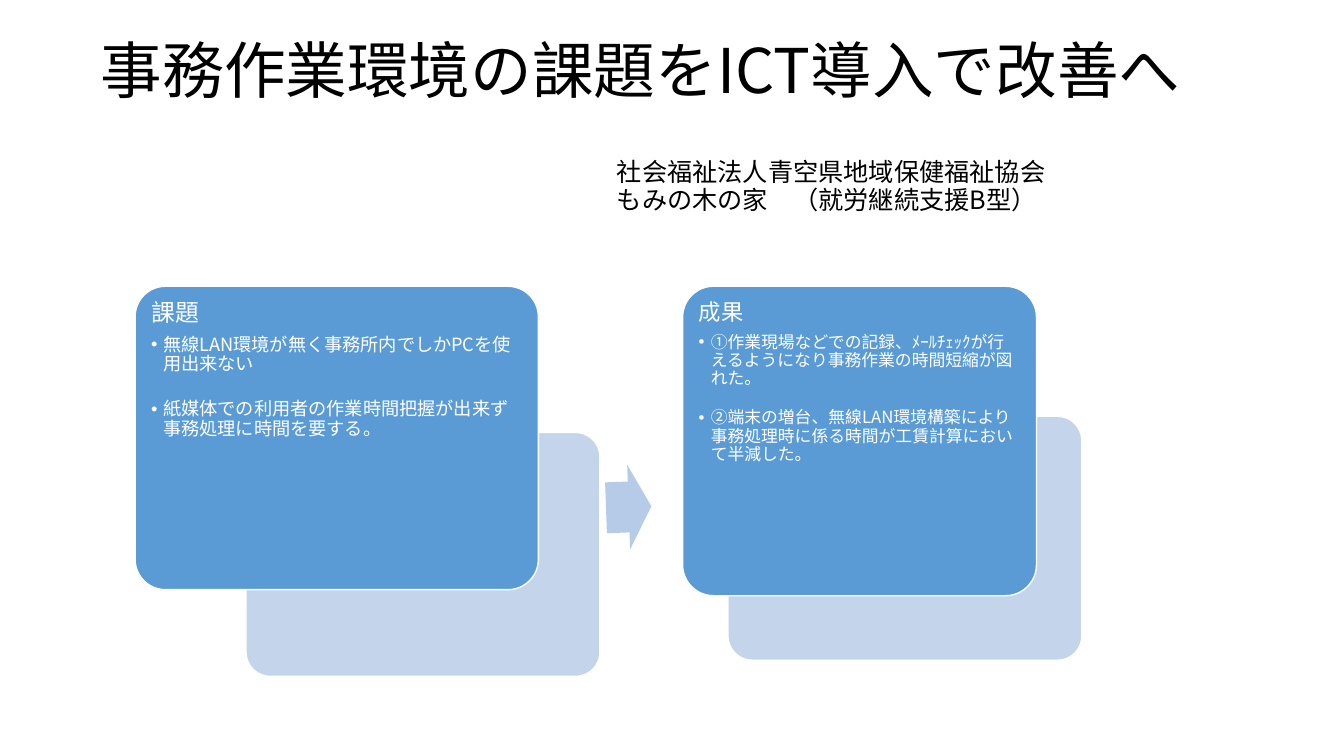
from lxml import etree
from pptx import Presentation
from pptx.dml.color import RGBColor
from pptx.enum.shapes import MSO_SHAPE
from pptx.enum.text import MSO_ANCHOR, MSO_AUTO_SIZE, PP_ALIGN
from pptx.oxml.ns import qn
from pptx.util import Inches, Pt

ROUNDED = MSO_SHAPE.ROUNDED_RECTANGLE
RIGHT_ARROW = MSO_SHAPE.RIGHT_ARROW
TOP, MIDDLE = MSO_ANCHOR.TOP, MSO_ANCHOR.MIDDLE
NO_AUTOFIT = MSO_AUTO_SIZE.NONE
LEFT = PP_ALIGN.LEFT

FONT = "Noto Sans CJK JP"
COLORS = {
    "black": "000000",
    "white": "FFFFFF",
    "card": "5B9BD5",
    "backing": "C4D5EB",
    "arrow": "B5CBE7",
}
LINE_SPACING = 0.9
INDENT = 0.12


def place(item, box):
    item.left, item.top, item.width, item.height = map(Inches, box)


def write(paragraph, text, size, color="black", after=0, bullet=False):
    paragraph.alignment = LEFT
    paragraph.line_spacing = LINE_SPACING
    paragraph.space_before = Pt(0)
    paragraph.space_after = Pt(after)
    properties = paragraph._p.get_or_add_pPr()
    indent = Inches(INDENT) if bullet else 0
    properties.set("marL", str(indent))
    properties.set("indent", str(-indent))
    if bullet:
        paragraph.level = 1
        etree.SubElement(properties, qn("a:buChar")).set("char", "•")
    else:
        etree.SubElement(properties, qn("a:buNone"))
    run = paragraph.add_run()
    run.text = text
    run.font.size = Pt(size)
    run.font.name = FONT
    run.font.color.rgb = RGBColor.from_string(COLORS[color])
    etree.SubElement(run._r.get_or_add_rPr(), qn("a:ea")).set("typeface", FONT)


def prepare_frame(frame, anchor, side=0.1, top=0.05):
    frame.word_wrap = True
    frame.auto_size = NO_AUTOFIT
    frame.vertical_anchor = anchor
    frame.margin_left = frame.margin_right = Inches(side)
    frame.margin_top = frame.margin_bottom = Inches(top)


def add_block(slide, kind, box, fill, adjustments, outlined=False):
    block = slide.shapes.add_shape(kind, *map(Inches, box))
    block.shadow.inherit = False
    for index, value in enumerate(adjustments):
        block.adjustments[index] = value
    block.fill.solid()
    block.fill.fore_color.rgb = RGBColor.from_string(COLORS[fill])
    if outlined:
        block.line.color.rgb = RGBColor.from_string(COLORS["white"])
        block.line.width = Pt(1)
    else:
        block.line.fill.background()
    return block


def add_heading(slide, box, text):
    heading = slide.shapes.title
    place(heading, box)
    prepare_frame(heading.text_frame, MIDDLE)
    write(heading.text_frame.paragraphs[0], text, 44)


def add_organization(slide, box, lines):
    organization = slide.shapes.add_textbox(*map(Inches, box))
    frame = organization.text_frame
    prepare_frame(frame, MIDDLE)
    for index, line in enumerate(lines):
        write(frame.add_paragraph() if index else frame.paragraphs[0], line, 18)


def add_card(slide, box, backing, points, heading, items, size, gap):
    left, top, width, height = box
    add_block(slide, ROUNDED, backing, "backing", [0.1], outlined=True)
    add_block(slide, ROUNDED, box, "card", [0.1], outlined=True)
    place(points, (left + 0.09, top + 0.08, width - 0.18, height - 0.17))
    slide.shapes._spTree.append(points._element)
    frame = points.text_frame
    prepare_frame(frame, TOP, side=0.07, top=0.07)
    write(frame.paragraphs[0], heading, size + 4, "white", after=6)
    for item in items:
        write(frame.add_paragraph(), item, size, "white", after=gap, bullet=True)


def add_arrow(slide, box):
    arrow = add_block(slide, RIGHT_ARROW, box, "arrow", [0.6, 0.5])
    arrow.rotation = 358


def main():
    deck = Presentation()
    deck.slide_width, deck.slide_height = Inches(13.33), Inches(7.5)
    slide = deck.slides.add_slide(deck.slide_layouts[3])
    issue_points, result_points = slide.placeholders[1], slide.placeholders[2]
    add_heading(slide, (0.9, 0.23, 11.5, 0.99), "事務作業環境の課題をICT導入で改善へ")
    add_card(
        slide, (1.34, 2.84, 4, 3.01), (2.44, 4.29, 3.51, 2.42), issue_points, "課題",
        ["無線LAN環境が無く事務所内でしかPCを使用出来ない",
         "紙媒体での利用者の作業時間把握が出来ず事務処理に時間を要する。"],
        size=13, gap=18,
    )
    add_arrow(slide, (6.01, 4.61, 0.45, 0.84))
    add_card(
        slide, (6.77, 2.84, 3.51, 3.07), (7.22, 4.13, 3.51, 2.42), result_points, "成果",
        ["①作業現場などでの記録、ﾒｰﾙﾁｪｯｸが行えるようになり事務作業の時間短縮が図れた。",
         "②端末の増台、無線LAN環境構築により事務処理時に係る時間が工賃計算において半減した。"],
        size=12, gap=15,
    )
    add_organization(
        slide, (6.02, 1.41, 5.29, 0.9),
        ["社会福祉法人青空県地域保健福祉協会", "もみの木の家　（就労継続支援B型）"],
    )
    deck.save("out.pptx")


if __name__ == "__main__":
    main()
